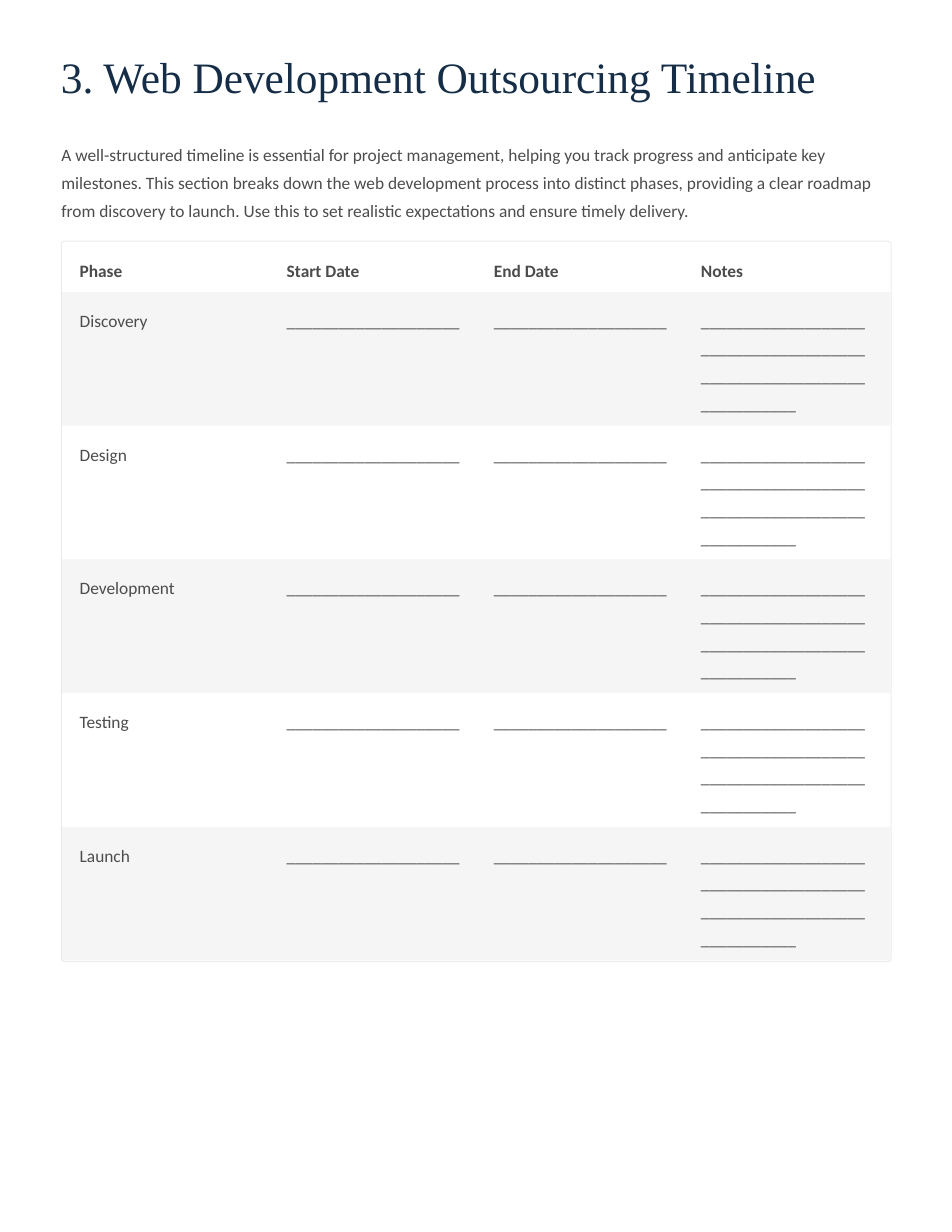
"""Build the web development outsourcing timeline page."""
from lxml.etree import SubElement
from pptx import Presentation
from pptx.dml.color import RGBColor
from pptx.enum.shapes import MSO_SHAPE as Shape
from pptx.oxml.ns import qn
from pptx.util import Cm, Pt

NAVY = RGBColor(0x15, 0x2D, 0x47)
GRAY = RGBColor(0x4C, 0x4C, 0x4D)
WHITE = RGBColor(0xFF, 0xFF, 0xFF)
BLACK = RGBColor(0x00, 0x00, 0x00)

INTRO = (
    "A well-structured timeline is essential for project management, helping you "
    "track progress and anticipate key milestones. This section breaks down the web "
    "development process into distinct phases, providing a clear roadmap from "
    "discovery to launch. Use this to set realistic expectations and ensure timely "
    "delivery."
)
HEADINGS = ["Phase", "Start Date", "End Date", "Notes"]
PHASES = ["Discovery", "Design", "Development", "Testing", "Launch"]
DATE_BLANK = "_" * 20
NOTES_BLANK = "_" * 68
LEFT, TOP, COLUMN_WIDTH = 2.64, 10.34, 8.84
HEADER_HEIGHT, PHASE_HEIGHT = 2.12, 5.71


def write(frame, text, size=21, font="Calibri", color=GRAY, bold=False,
          spacing=33.5, wrap=True):
    frame.word_wrap = wrap
    para = frame.paragraphs[0]
    para.line_spacing = Pt(spacing)
    span = para.add_run()
    span.text = text
    span.font.size = Pt(size)
    span.font.name = font
    span.font.bold = bold
    span.font.color.rgb = color


def tint(fill, color, percent):
    fill.solid()
    fill.fore_color.rgb = color
    shade = fill._xPr.find(qn("a:solidFill"))[0]
    SubElement(shade, qn("a:alpha"), val=str(percent * 1000))


deck = Presentation()
deck.slide_width, deck.slide_height = Cm(40.64), Cm(52.6)
page = deck.slides.add_slide(deck.slide_layouts[6])
page.background.fill.solid()
page.background.fill.fore_color.rgb = WHITE

title = page.shapes.add_textbox(Cm(2.6), Cm(2.04), Cm(33.25), Cm(2.34))
intro = page.shapes.add_textbox(Cm(2.62), Cm(5.87), Cm(35.43), Cm(3.58))
for box in (title, intro):
    frame = box.text_frame
    frame.margin_left = frame.margin_right = 0
    frame.margin_top = frame.margin_bottom = 0
write(title.text_frame, "3. Web Development Outsourcing Timeline", size=52.5,
      font="Times New Roman", color=NAVY, spacing=66, wrap=False)
write(intro.text_frame, INTRO)

outline = page.shapes.add_shape(
    Shape.ROUNDED_RECTANGLE, Cm(2.62), Cm(10.3), Cm(35.42), Cm(30.76))
outline.adjustments[0] = 0.004
outline.shadow.inherit = False
outline.fill.background()
outline.line.width = Pt(1.2)
tint(outline.line.fill, BLACK, 8)

rows = [HEADINGS] + [[phase, DATE_BLANK, DATE_BLANK, NOTES_BLANK] for phase in PHASES]
heights = [HEADER_HEIGHT] + [PHASE_HEIGHT] * len(PHASES)
width = COLUMN_WIDTH * len(HEADINGS)

for index, height in enumerate(heights):
    band = page.shapes.add_shape(
        Shape.RECTANGLE, Cm(LEFT), Cm(TOP + sum(heights[:index])), Cm(width), Cm(height))
    band.shadow.inherit = False
    band.line.fill.background()
    tint(band.fill, BLACK if index % 2 else WHITE, 4)

timeline = page.shapes.add_table(
    len(rows), len(HEADINGS), Cm(LEFT), Cm(TOP), Cm(width), Cm(sum(heights))).table
timeline.horz_banding = False
timeline.first_row = False
for column in timeline.columns:
    column.width = Cm(COLUMN_WIDTH)

for index, row in enumerate(rows):
    timeline.rows[index].height = Cm(heights[index])
    for position, text in enumerate(row):
        cell = timeline.cell(index, position)
        cell.margin_left = Cm(0.76)
        cell.margin_right = Cm(0.2 if text == DATE_BLANK else 0.73)
        cell.margin_top = Cm(0.53)
        cell.margin_bottom = Cm(0.3)
        properties = cell._tc.get_or_add_tcPr()
        for side in ("a:lnL", "a:lnR", "a:lnT", "a:lnB"):
            SubElement(SubElement(properties, qn(side), w="0"), qn("a:noFill"))
        cell.fill.background()
        write(cell.text_frame, text, bold=index == 0)

deck.save("out.pptx")
